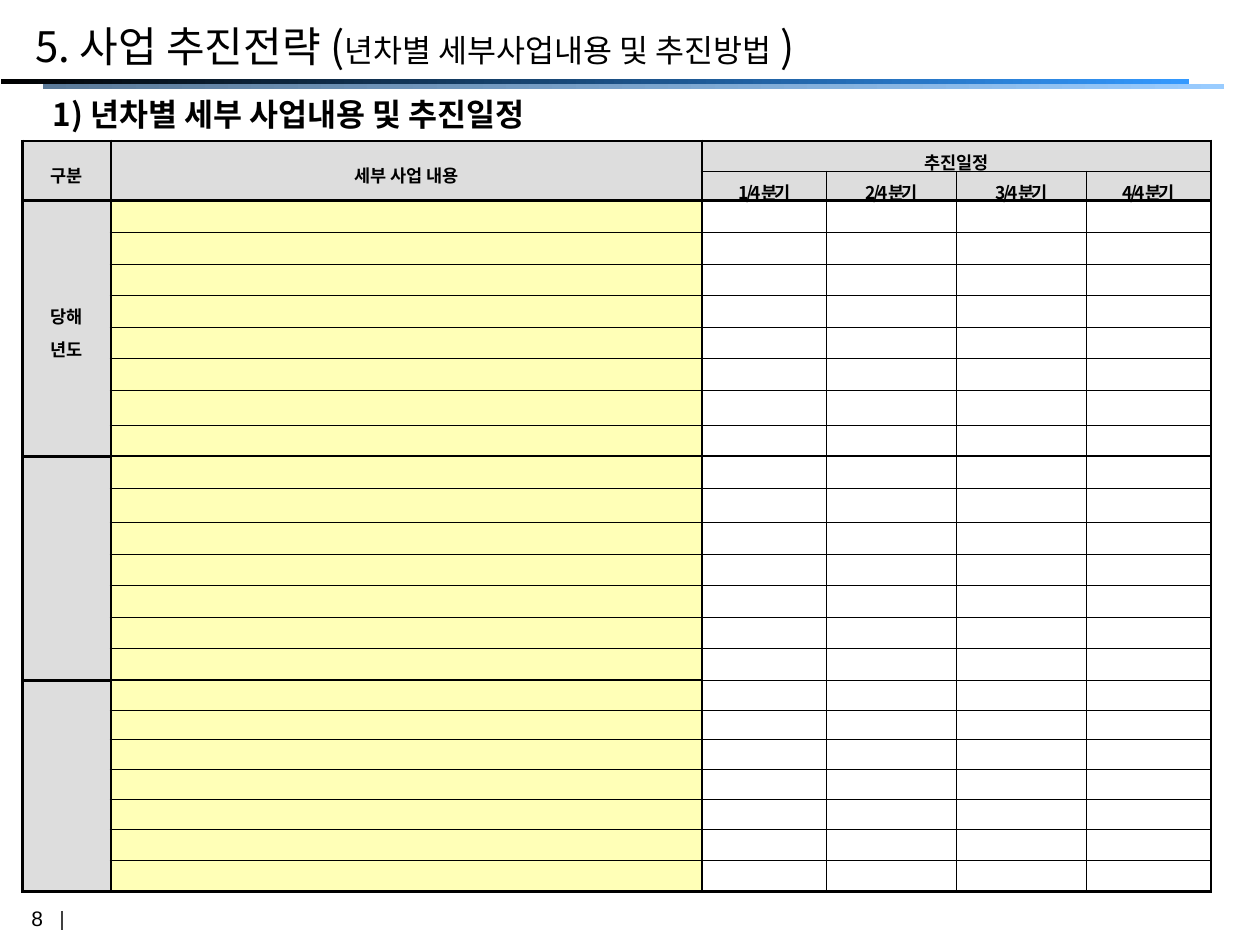
from lxml import etree
from pptx import Presentation
from pptx import util as u
from pptx.dml.color import RGBColor
from pptx.enum import shapes, text
from pptx.oxml import ns

BLACK = RGBColor(0x00, 0x00, 0x00)
GREY = RGBColor(0xDD, 0xDD, 0xDD)
YELLOW = RGBColor(0xFF, 0xFF, 0x99)
DARK_GREY = RGBColor(0x40, 0x40, 0x40)
BLUE = RGBColor(0x33, 0x99, 0xFF)
SLATE = RGBColor(0x5B, 0x7A, 0x99)
SKY = RGBColor(0x99, 0xCC, 0xFF)
KOREAN = "Noto Sans CJK KR"
THICK, THIN = 1.7, 0.28


def set_font(font, size, bold=False, name=KOREAN):
    font.size = u.Pt(size)
    font.bold = bold
    font.name = name
    font.color.rgb = BLACK
    etree.SubElement(font._rPr, ns.qn("a:ea"), typeface=name)


def add_border(cell, side, weight):
    line = etree.SubElement(cell._tc.get_or_add_tcPr(), ns.qn(f"a:ln{side}"), w=str(u.Pt(weight)))
    fill = etree.SubElement(line, ns.qn("a:solidFill"))
    etree.SubElement(fill, ns.qn("a:srgbClr"), val=str(BLACK))


deck = Presentation()
deck.slide_width, deck.slide_height = u.Pt(720), u.Pt(540)
page = deck.slides.add_slide(deck.slide_layouts[6])

number = page.shapes.add_textbox(u.Pt(-3.6), u.Pt(514), u.Pt(49.7), u.Pt(25))
number.text_frame.word_wrap = False
para = number.text_frame.paragraphs[0]
para.text = "8"
para.alignment = text.PP_ALIGN.CENTER
set_font(para.font, 12, name="Arial")

divider = page.shapes.add_connector(
    shapes.MSO_CONNECTOR.STRAIGHT, u.Pt(35.5), u.Pt(520.5), u.Pt(35.5), u.Pt(531.5))
divider.line.color.rgb = DARK_GREY
divider.line.width = u.Pt(0.75)
etree.SubElement(divider._element.spPr, ns.qn("a:effectLst"))

for left, top, width, start, end in [
    (0.5, 45, 679, BLACK, BLUE),
    (24.5, 48.2, 675, SLATE, SKY),
]:
    bar = page.shapes.add_shape(
        shapes.MSO_SHAPE.RECTANGLE, u.Pt(left), u.Pt(top), u.Pt(width), u.Pt(2.8))
    bar.shadow.inherit = False
    bar.line.fill.background()
    bar.fill.gradient()
    bar.fill.gradient_angle = 0
    for stop, color in zip(bar.fill.gradient_stops, (start, end)):
        stop.color.rgb = color

title = page.shapes.add_textbox(u.Pt(13), u.Pt(8), u.Pt(602.6), u.Pt(46))
title.text_frame.word_wrap = True
para = title.text_frame.paragraphs[0]
for words, size in [("5. 사업 추진전략 (", 24), ("년차별 세부사업내용 및 추진방법", 18), (" )", 24)]:
    span = para.add_run()
    span.text = words
    set_font(span.font, size)

row_heights = [16] * 2 + [18] * 6 + [20] + [18] * 2 + [20] + [18] * 5 + [17] * 5 + [18] * 2
column_widths = [50.4, 337.7, 71.3, 74.2, 74.2, 71.3]
frame = page.shapes.add_table(
    len(row_heights), len(column_widths), u.Pt(13), u.Pt(80.6),
    u.Pt(sum(column_widths)), u.Pt(sum(row_heights)))
table = frame.table
table.first_row = table.horz_banding = False
table._tbl.tblPr.find(ns.qn("a:tableStyleId")).text = "{2D5ABB26-0587-4C30-8999-92F81FD0307C}"
for row, height in zip(table.rows, row_heights):
    row.height = u.Pt(height)
for column, width in zip(table.columns, column_widths):
    column.width = u.Pt(width)

for top, left, bottom, right in [
    (0, 0, 1, 0), (0, 1, 1, 1), (0, 2, 0, 5), (2, 0, 9, 0), (10, 0, 16, 0), (17, 0, 23, 0),
]:
    table.cell(top, left).merge(table.cell(bottom, right))

labels = {(0, 0): "구분", (0, 1): "세부 사업 내용", (0, 2): "추진일정", (2, 0): "당해\n년도"}
for quarter in range(1, 5):
    labels[1, quarter + 1] = f"{quarter} / 4 분기"

thick_columns = {0, 1, 2, 6}
row_weights = {0: THICK, 2: THICK, 10: 1.41, 24: THICK}

for r in range(len(row_heights)):
    for c in range(len(column_widths)):
        cell = table.cell(r, c)
        cell.margin_left = cell.margin_right = cell.margin_top = cell.margin_bottom = u.Pt(0.72)
        cell.vertical_anchor = text.MSO_ANCHOR.MIDDLE
        cell.text = labels.get((r, c), "")
        for para in cell.text_frame.paragraphs:
            para.alignment = text.PP_ALIGN.CENTER
            if (r, c) in labels:
                para.line_spacing = 1.3
                set_font(para.font, 10, bold=True)
                if r == 1:
                    para.font._rPr.set("spc", "-180")
            else:
                etree.SubElement(para._p, ns.qn("a:endParaRPr"), sz="800")
        if cell.is_spanned:
            continue

        for side, x in [("L", c), ("R", c + cell.span_width if cell.is_merge_origin else c + 1)]:
            add_border(cell, side, THICK if x in thick_columns else THIN)
        for side, y in [("T", r), ("B", r + cell.span_height if cell.is_merge_origin else r + 1)]:
            weight = THICK if c == 0 else row_weights.get(y, THIN)
            add_border(cell, side, 1.13 if (c, y) == (1, 17) else weight)

        if r < 2 or c == 0:
            cell.fill.solid()
            cell.fill.fore_color.rgb = GREY
        elif c == 1:
            cell.fill.solid()
            cell.fill.fore_color.rgb = YELLOW
            color = cell._tc.tcPr.find(ns.qn("a:solidFill")).find(ns.qn("a:srgbClr"))
            etree.SubElement(color, ns.qn("a:alpha"), val="70000")
        else:
            cell.fill.background()

heading = page.shapes.add_textbox(u.Pt(23), u.Pt(51), u.Pt(319), u.Pt(29))
heading.text_frame.word_wrap = False
heading.text_frame.auto_size = text.MSO_AUTO_SIZE.SHAPE_TO_FIT_TEXT
para = heading.text_frame.paragraphs[0]
para.text = "1) 년차별 세부 사업내용 및 추진일정"
set_font(para.font, 18, bold=True)

deck.save("out.pptx")
